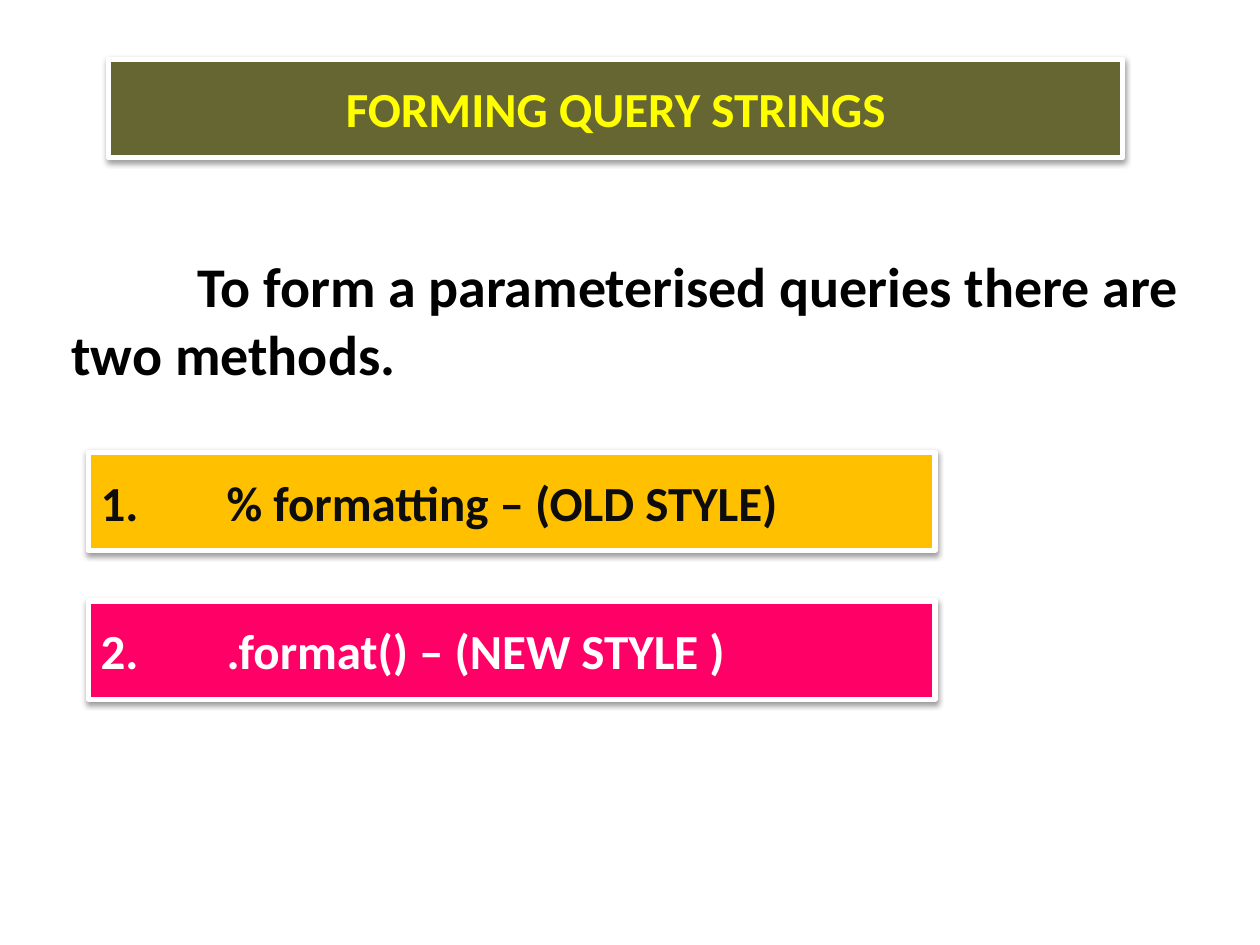
"""Build the slide on forming query strings."""
from lxml import etree
from pptx import Presentation
from pptx.dml.color import RGBColor
from pptx.enum import shapes, text
from pptx.oxml.ns import qn
from pptx.util import Pt

PX = 9144
HUES = {"olive": "666633", "yellow": "FFFF00", "gold": "FFC000", "ink": "0D0D0D",
        "pink": "FF0066", "white": "FFFFFF", "black": "000000"}


def hue(name):
    return RGBColor.from_string(HUES[name])


def write(shape, words, size=28, color="black", align="LEFT", anchor="MIDDLE"):
    frame = shape.text_frame
    frame.word_wrap = True
    frame.vertical_anchor = text.MSO_ANCHOR[anchor]
    para = frame.paragraphs[0]
    para.alignment = text.PP_ALIGN[align]
    if "\t" in words:
        stops = etree.SubElement(para._p.get_or_add_pPr(), qn("a:tabLst"))
        etree.SubElement(stops, qn("a:tab"), pos=str(100 * PX), algn="l")
    run = para.add_run()
    run.text = words
    run.font.name = "Calibri"
    run.font.size = Pt(size)
    run.font.bold = True
    run.font.color.rgb = hue(color)


deck = Presentation()
deck.slide_width, deck.slide_height = 1000 * PX, 750 * PX
slide = deck.slides.add_slide(deck.slide_layouts[6])

intro = slide.shapes.add_textbox(47 * PX, 195 * PX, 914 * PX, 118 * PX)
write(intro, "\tTo form a parameterised queries there are two methods.",
      size=32, anchor="TOP")
intro.text_frame.auto_size = text.MSO_AUTO_SIZE.SHAPE_TO_FIT_TEXT

bars = [
    (86, 47, 805, "olive", "yellow", "CENTER", "FORMING QUERY STRINGS"),
    (70, 359, 672, "gold", "ink", "LEFT", "1.\t% formatting – (OLD STYLE)"),
    (70, 477, 672, "pink", "white", "LEFT", "2.\t.format() – (NEW STYLE )"),
]
for left, top, width, fill, color, align, words in bars:
    bar = slide.shapes.add_shape(shapes.MSO_SHAPE.RECTANGLE,
                                 left * PX, top * PX, width * PX, 78 * PX)
    bar.fill.solid()
    bar.fill.fore_color.rgb = hue(fill)
    bar.line.color.rgb = hue("white")
    bar.line.width = Pt(3)
    bar.shadow.inherit = False
    glow = bar._element.spPr.find(qn("a:effectLst"))
    shade = etree.SubElement(glow, qn("a:outerShdw"), blurRad="40000",
                             dist="20000", dir="5400000", rotWithShape="0")
    tint = etree.SubElement(shade, qn("a:srgbClr"), val=HUES["black"])
    etree.SubElement(tint, qn("a:alpha"), val="38000")
    write(bar, words, color=color, align=align)

deck.save("out.pptx")
